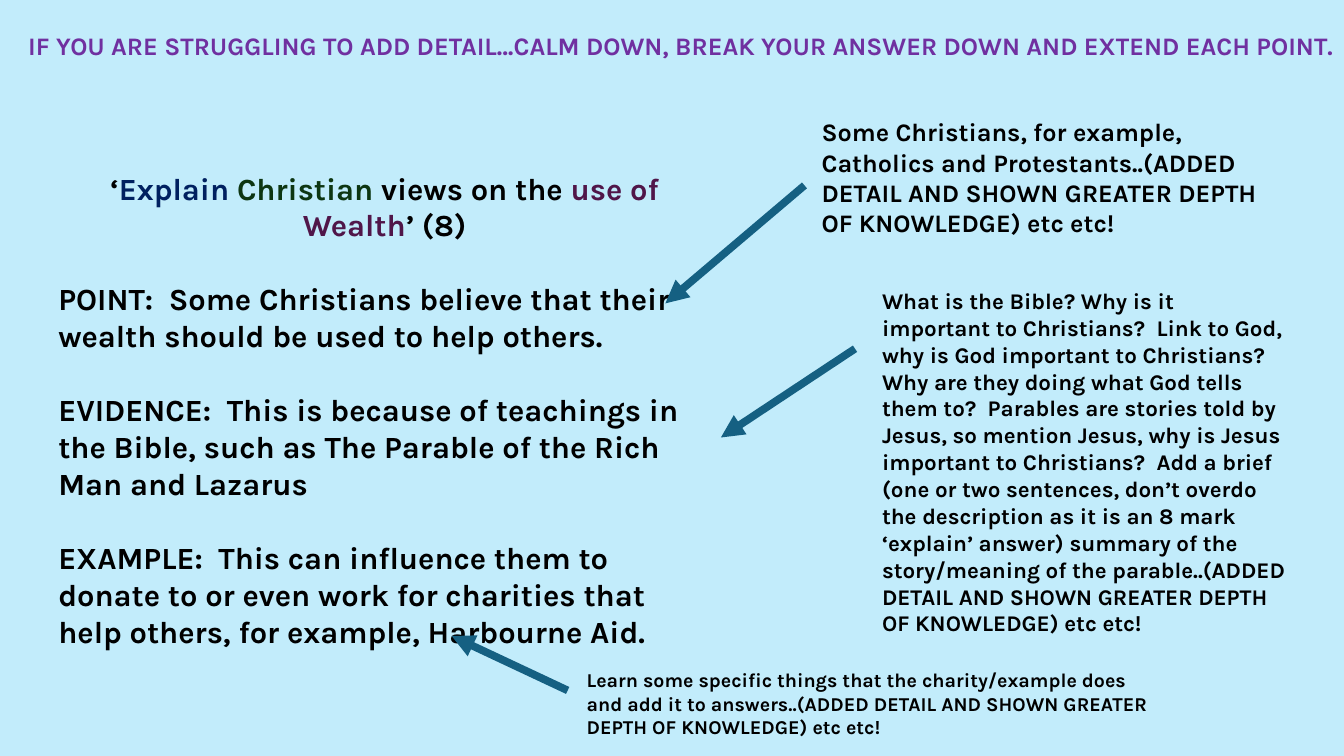
"""Build a slide on extending each point of an exam answer."""
from lxml.etree import SubElement
from pptx import Presentation
from pptx.dml.color import RGBColor
from pptx.enum.shapes import MSO_CONNECTOR
from pptx.enum.text import MSO_ANCHOR, MSO_AUTO_SIZE, PP_ALIGN
from pptx.oxml.ns import qn
from pptx.util import Inches, Pt

SKY = RGBColor(0xC2, 0xEC, 0xFB)
PURPLE = RGBColor(0x70, 0x30, 0xA0)
BLACK = RGBColor(0, 0, 0)
NAVY = RGBColor(0x00, 0x20, 0x60)
GREEN = RGBColor(0x0D, 0x36, 0x12)
PLUM = RGBColor(0x50, 0x16, 0x49)
TEAL = RGBColor(0x15, 0x60, 0x82)
FONT = "Karla"

HEADING = "IF YOU ARE STRUGGLING TO ADD DETAIL…CALM DOWN, BREAK YOUR ANSWER DOWN AND EXTEND EACH POINT."
QUESTION = [("‘", BLACK), ("Explain ", NAVY), ("Christian", GREEN),
            (" views on the ", BLACK), ("use of Wealth", PLUM), ("’ (8)", BLACK)]
STEPS = [
    "POINT:  Some Christians believe that their wealth should be used to help others.",
    "EVIDENCE:  This is because of teachings in the Bible, such as The Parable of the Rich Man and Lazarus",
    "EXAMPLE:  This can influence them to donate to or even work for charities that help others, "
    "for example, Harbourne Aid.",
]
PRAISE = "..(ADDED DETAIL AND SHOWN GREATER DEPTH OF KNOWLEDGE) etc etc!"

# Boxes and arrow ends are percentages of the slide's width and height.
HEAD_BOX = (1.35, 3.33, 98.65, 5.33)
ANSWER_BOX = (3.6, 21.73, 50.04, 69.6)
NOTES = [
    {"text": "Some Christians, for example, Catholics and Protestants",
     "size": 18, "box": (60.39, 14.8, 36, 17.47),
     "arrow": (59.86, 24.53, 49.51, 40.13)},
    {"text": "What is the Bible? Why is it important to Christians?  Link to God, why is God "
             "important to Christians?  Why are they doing what God tells them to?  Parables are "
             "stories told by Jesus, so mention Jesus, why is Jesus important to Christians?  Add "
             "a brief (one or two sentences, don’t overdo the description as it is an 8 mark "
             "‘explain’ answer) summary of the story/meaning of the parable",
     "size": 16, "box": (64.89, 37.33, 31.51, 48),
     "arrow": (63.62, 46.13, 53.64, 57.87)},
    {"text": "Learn some specific things that the charity/example does and add it to answers",
     "size": 14, "box": (42.91, 87.73, 44.64, 10.8),
     "arrow": (42.24, 91.33, 33.61, 84.13)},
]

deck = Presentation()
deck.slide_width, deck.slide_height = Inches(13.33), Inches(7.5)
slide = deck.slides.add_slide(deck.slide_layouts[5])
slide.background.fill.solid()
slide.background.fill.fore_color.rgb = SKY


def scale(spots):
    """Turn alternating x and y percentages into slide lengths."""
    sides = (deck.slide_width, deck.slide_height)
    return [int(sides[i % 2] * spot / 100) for i, spot in enumerate(spots)]


def write(para, text, size=18, color=BLACK, align=PP_ALIGN.LEFT, before=0):
    """Add one formatted run to a paragraph."""
    para.alignment = align
    para.line_spacing = 1.0
    para.space_before = Pt(before)
    run = para.add_run()
    run.text = text
    run.font.name, run.font.size, run.font.bold = FONT, Pt(size), True
    run.font.color.rgb = color


def add_box(box):
    """Add a wrapping text box and return its frame."""
    frame = slide.shapes.add_textbox(*scale(box)).text_frame
    frame.word_wrap = True
    return frame


def add_arrow(ends):
    """Draw a thick arrow between two points."""
    arrow = slide.shapes.add_connector(MSO_CONNECTOR.STRAIGHT, *scale(ends))
    arrow.line.color.rgb = TEAL
    arrow.line.width = Pt(5.5)
    SubElement(arrow.line._get_or_add_ln(), qn("a:tailEnd"), type="triangle")
    SubElement(arrow._element.spPr, qn("a:effectLst"))


title = slide.shapes.title
title.left, title.top, title.width, title.height = scale(HEAD_BOX)
frame = title.text_frame
frame.word_wrap = False
frame.auto_size = MSO_AUTO_SIZE.NONE
frame.vertical_anchor = MSO_ANCHOR.TOP
write(frame.paragraphs[0], HEADING, color=PURPLE)

frame = add_box(ANSWER_BOX)
for text, color in QUESTION:
    write(frame.paragraphs[0], text, size=22, color=color, align=PP_ALIGN.CENTER)
for step in STEPS:
    write(frame.add_paragraph(), step, size=22, before=26.4)

for note in NOTES:
    add_arrow(note["arrow"])
    write(add_box(note["box"]).paragraphs[0], note["text"] + PRAISE, size=note["size"])

deck.save("out.pptx")
